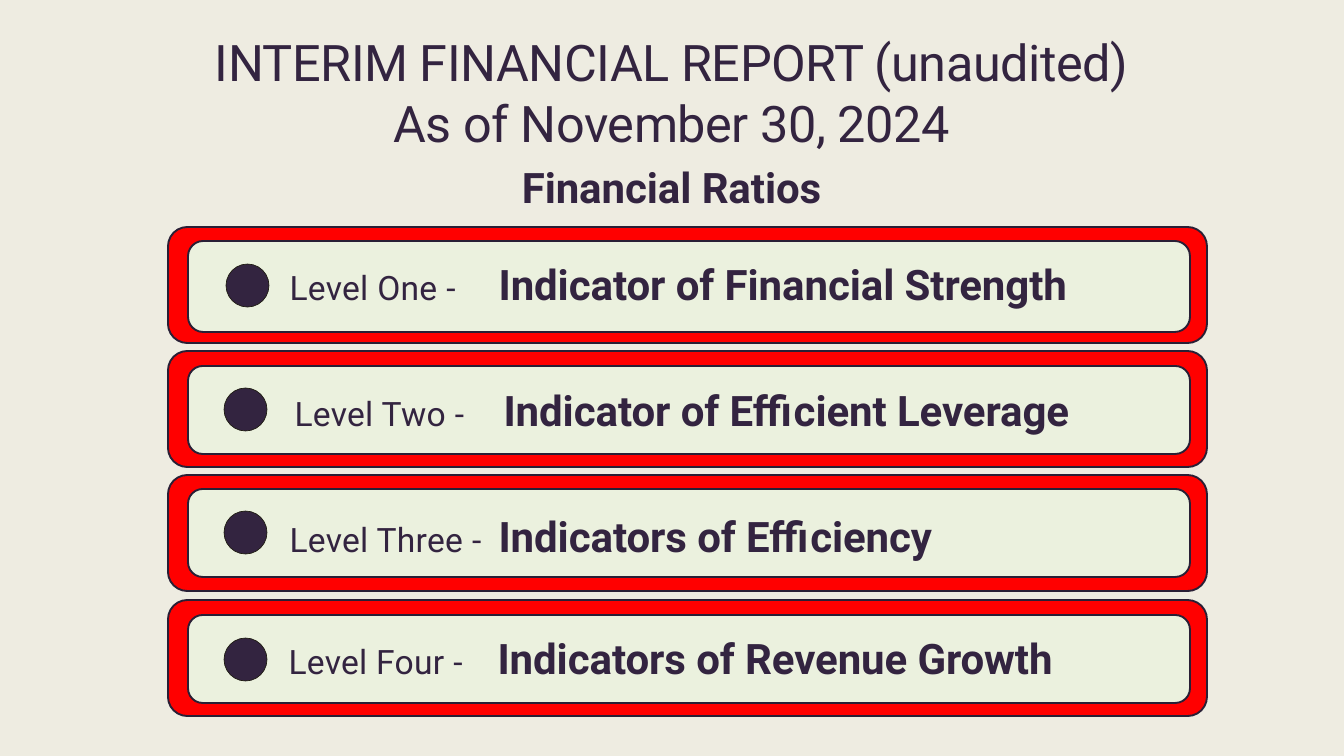
from dataclasses import dataclass

import pptx
import pptx.dml.color
import pptx.enum.shapes
import pptx.enum.text
import pptx.oxml
import pptx.oxml.ns
import pptx.util

PX = 914400 / 67.2  # EMU in one px
INK, EDGE, DOT_EDGE = "332440", "291F35", "1E1C11"
RED, PALE, PAPER = "FF0000", "EBF1DE", "EEECE1"
SHAPE = pptx.enum.shapes.MSO_SHAPE
ANCHOR = pptx.enum.text.MSO_ANCHOR


@dataclass
class Level:
    name: str
    indicator: str
    panel_top: int
    panel_height: int
    dot_left: int
    dot_top: int
    label_left: int
    label_top: int
    label_width: int


LEVELS = [
    Level("Level One ", "Indicator of Financial Strength", 241, 91, 226, 264, 283, 255, 896),
    Level("Level Two ", "Indicator of Efficient Leverage", 366, 88, 224, 388, 288, 381, 831),
    Level("Level Three ", "Indicators of Efficiency", 489, 88, 224, 511, 283, 507, 907),
    Level("Level Four ", "Indicators of Revenue Growth", 615, 88, 224, 638, 282, 629, 898),
]


def px(n: int) -> int:
    return round(n * PX)


def rgb(color: str) -> pptx.dml.color.RGBColor:
    return pptx.dml.color.RGBColor.from_string(color)


def add_shape(s, kind, left: int, top: int, width: int, height: int,
              fill: str, line: str, weight: float) -> None:
    sp = s.shapes.add_shape(kind, px(left), px(top), px(width), px(height))
    sp.shadow.inherit = False
    sp.fill.solid()
    sp.fill.fore_color.rgb = rgb(fill)
    sp.line.color.rgb = rgb(line)
    sp.line.width = pptx.util.Pt(weight)


def add_run(p, text: str, size: int, spacing: int, bold: bool = False) -> None:
    """Add a run; spacing is in hundredths of a point."""
    r = p.add_run()
    r.text = text
    r.font.name = "Roboto"
    r.font.size = pptx.util.Pt(size)
    r.font.bold = bold
    r.font.color.rgb = rgb(INK)
    r.font._element.set("spc", str(spacing))


def add_tab_stop(p, position: int) -> None:
    tabs = pptx.oxml.parse_xml(
        f'<a:tabLst {pptx.oxml.ns.nsdecls("a")}>'
        f'<a:tab pos="{px(position)}" algn="l"/></a:tabLst>')
    p._p.get_or_add_pPr().append(tabs)


def add_title(s) -> None:
    sp = s.shapes.title
    sp.left, sp.top, sp.width, sp.height = px(168), px(28), px(1007), px(184)
    tf = sp.text_frame
    tf.auto_size = pptx.enum.text.MSO_AUTO_SIZE.NONE
    tf.word_wrap = True
    tf.vertical_anchor = ANCHOR.BOTTOM
    tf.margin_left = tf.margin_top = tf.margin_right = tf.margin_bottom = 0
    p = tf.paragraphs[0]
    add_run(p, "INTERIM FINANCIAL REPORT (unaudited)", 54, -50)
    p.add_line_break()
    add_run(p, "As of November 30, 2024", 54, -50)
    subtitle = tf.add_paragraph()
    subtitle.space_before = pptx.util.Pt(10)
    add_run(subtitle, "Financial Ratios", 45, -10, True)
    for p in tf.paragraphs:
        p.alignment = pptx.enum.text.PP_ALIGN.CENTER


def add_level(s, level: Level, frame_top: int) -> None:
    # Red frame, pale panel and dot
    add_shape(s, SHAPE.ROUNDED_RECTANGLE, 168, frame_top, 1039, 116, RED, EDGE, 2)
    add_shape(s, SHAPE.ROUNDED_RECTANGLE, 188, level.panel_top, 1002,
              level.panel_height, PALE, EDGE, 2)
    add_shape(s, SHAPE.OVAL, level.dot_left, level.dot_top, 43, 43, INK, DOT_EDGE, 0.75)

    # Level name and its indicator, aligned by a tab stop
    sp = s.shapes.add_textbox(px(level.label_left), px(level.label_top),
                              px(level.label_width), px(58))
    tf = sp.text_frame
    tf.word_wrap = True
    tf.vertical_anchor = ANCHOR.MIDDLE
    p = tf.paragraphs[0]
    add_tab_stop(p, 209)
    add_run(p, level.name, 36, 30)
    add_run(p, "-\t", 36, 0)
    add_run(p, level.indicator, 45, -10, True)


def main() -> None:
    prs = pptx.Presentation()
    prs.slide_width, prs.slide_height = px(1344), px(756)
    s = prs.slides.add_slide(prs.slide_layouts[5])
    s.background.fill.solid()
    s.background.fill.fore_color.rgb = rgb(PAPER)

    add_title(s)
    for i, level in enumerate(LEVELS):
        add_level(s, level, 227 + 373 * i // 3)

    prs.save("out.pptx")


if __name__ == "__main__":
    main()
